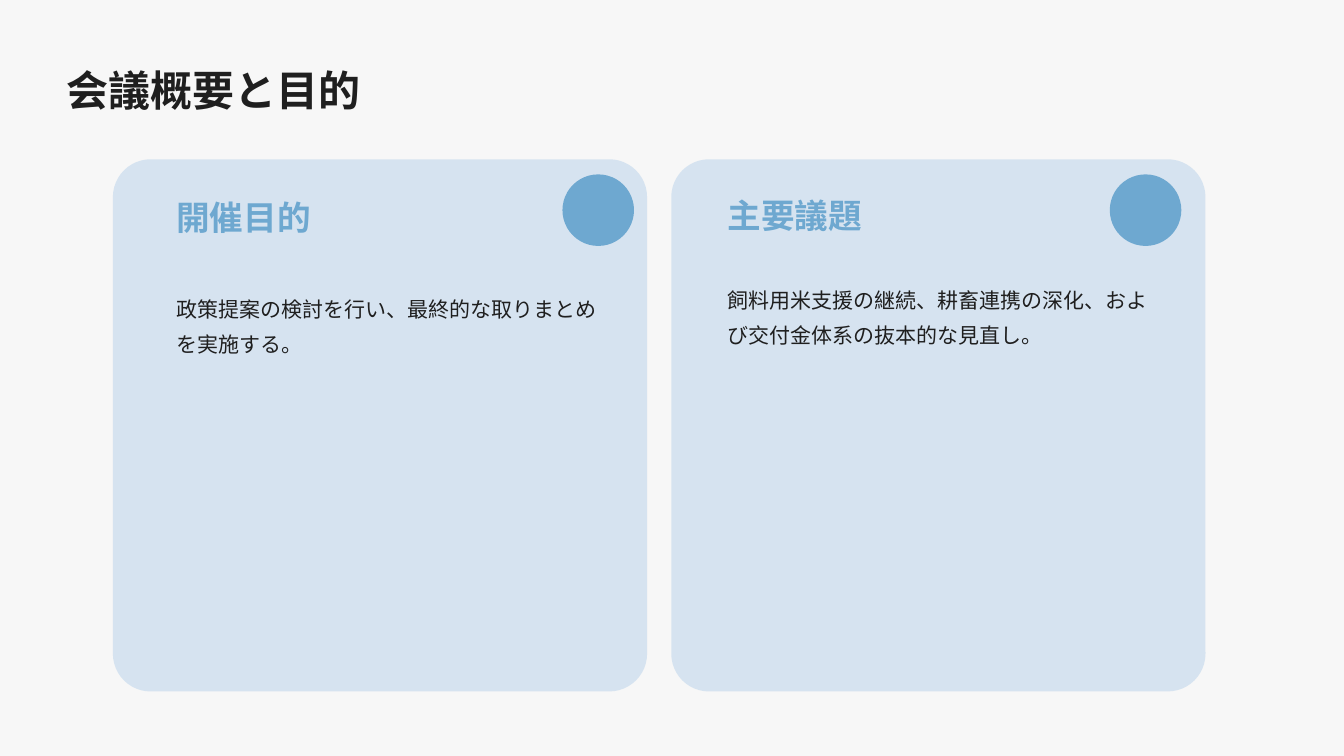
import pptx
import pptx.util
import pptx.dml.color
import pptx.enum.shapes
import pptx.enum.text
import pptx.oxml
import pptx.oxml.ns
from lxml import etree

Pt = pptx.util.Pt
SHAPES = pptx.enum.shapes.MSO_SHAPE
ANCHOR = pptx.enum.text.MSO_ANCHOR

# Content
TITLE = "会議概要と目的"
# Horizontal places are for each card; the two cards differ slightly
CARDS = [
    dict(heading="開催目的",
         body="政策提案の検討を行い、最終的な取りまとめを実施する。",
         left=80.64, text_left=120.96, dot_left=401.76,
         heading_top=132.48, body_top=201.6),
    dict(heading="主要議題",
         body="飼料用米支援の継続、耕畜連携の深化、および交付金体系の抜本的な見直し。",
         left=479.52, text_left=514.8, dot_left=792.72,
         heading_top=131.04, body_top=195.12),
]

# Style
FONT = "Noto Sans CJK SC"
COLORS = dict(background="F7F7F7", card="CEDFEF", accent="6EA8D0", text="1F1F1F")
CARD_TOP, CARD_W, CARD_H = 113.76, 381.6, 380.16
DOT_TOP, DOT_SIZE = 124.56, 51.12
HEADING_W, HEADING_H = 264.24, 38.88
BODY_W, BODY_H = 310.32, 275.76
TITLE_INSETS = (10.08, 10.08, 4.32, 10.08)
CARD_INSETS = (5.04, 2.88, 5.04, 2.88)


def rgb(name):
    return pptx.dml.color.RGBColor.from_string(COLORS[name])


def add_filled(slide, kind, left, top, width, height, color):
    sp = slide.shapes.add_shape(kind, Pt(left), Pt(top), Pt(width), Pt(height))
    sp.shadow.inherit = False
    sp.fill.solid()
    sp.fill.fore_color.rgb = rgb(color)
    sp.line.fill.background()
    return sp


def add_text(slide, text, left, top, width, height, size, color, spacing,
             insets=CARD_INSETS, bold=False, anchor=ANCHOR.MIDDLE):
    sp = slide.shapes.add_textbox(Pt(left), Pt(top), Pt(width), Pt(height))
    tf = sp.text_frame
    tf.word_wrap = True
    tf.vertical_anchor = anchor
    tf.margin_left, tf.margin_top, tf.margin_right, tf.margin_bottom = map(Pt, insets)
    p = tf.paragraphs[0]
    p.text = text
    p.line_spacing = spacing
    p.font.size = Pt(size)
    p.font.bold = bold
    p.font.color.rgb = rgb(color)
    p.font.name = FONT
    # East Asian typeface follows the Latin one
    latin = p._p.find(".//" + pptx.oxml.ns.qn("a:latin"))
    ea = etree.Element(pptx.oxml.ns.qn("a:ea"), typeface=FONT)
    latin.addnext(ea)


def add_card(slide, card):
    # Translucent panel
    sp = add_filled(slide, SHAPES.ROUNDED_RECTANGLE, card["left"], CARD_TOP,
                    CARD_W, CARD_H, "card")
    sp.adjustments[0] = 0.071
    color = sp.fill._xPr.find(".//" + pptx.oxml.ns.qn("a:srgbClr"))
    etree.SubElement(color, pptx.oxml.ns.qn("a:alpha"), val="80000")

    # Corner dot
    add_filled(slide, SHAPES.OVAL, card["dot_left"], DOT_TOP, DOT_SIZE, DOT_SIZE, "accent")

    # Heading and body
    add_text(slide, card["heading"], card["text_left"], card["heading_top"],
             HEADING_W, HEADING_H, 24, "accent", 1.2, bold=True)
    add_text(slide, card["body"], card["text_left"], card["body_top"],
             BODY_W, BODY_H, 15, "text", 1.4, anchor=ANCHOR.TOP)


def main():
    prs = pptx.Presentation()
    prs.slide_width, prs.slide_height = Pt(960), Pt(540)
    s = prs.slides.add_slide(prs.slide_layouts[6])
    s.background.fill.solid()
    s.background.fill.fore_color.rgb = rgb("background")

    # Title
    add_text(s, TITLE, 37.44, 20.88, 884.88, 72, 30, "text", 1.4,
             insets=TITLE_INSETS, bold=True)

    # Cards
    for card in CARDS:
        add_card(s, card)

    prs.save("out.pptx")


if __name__ == "__main__":
    main()
